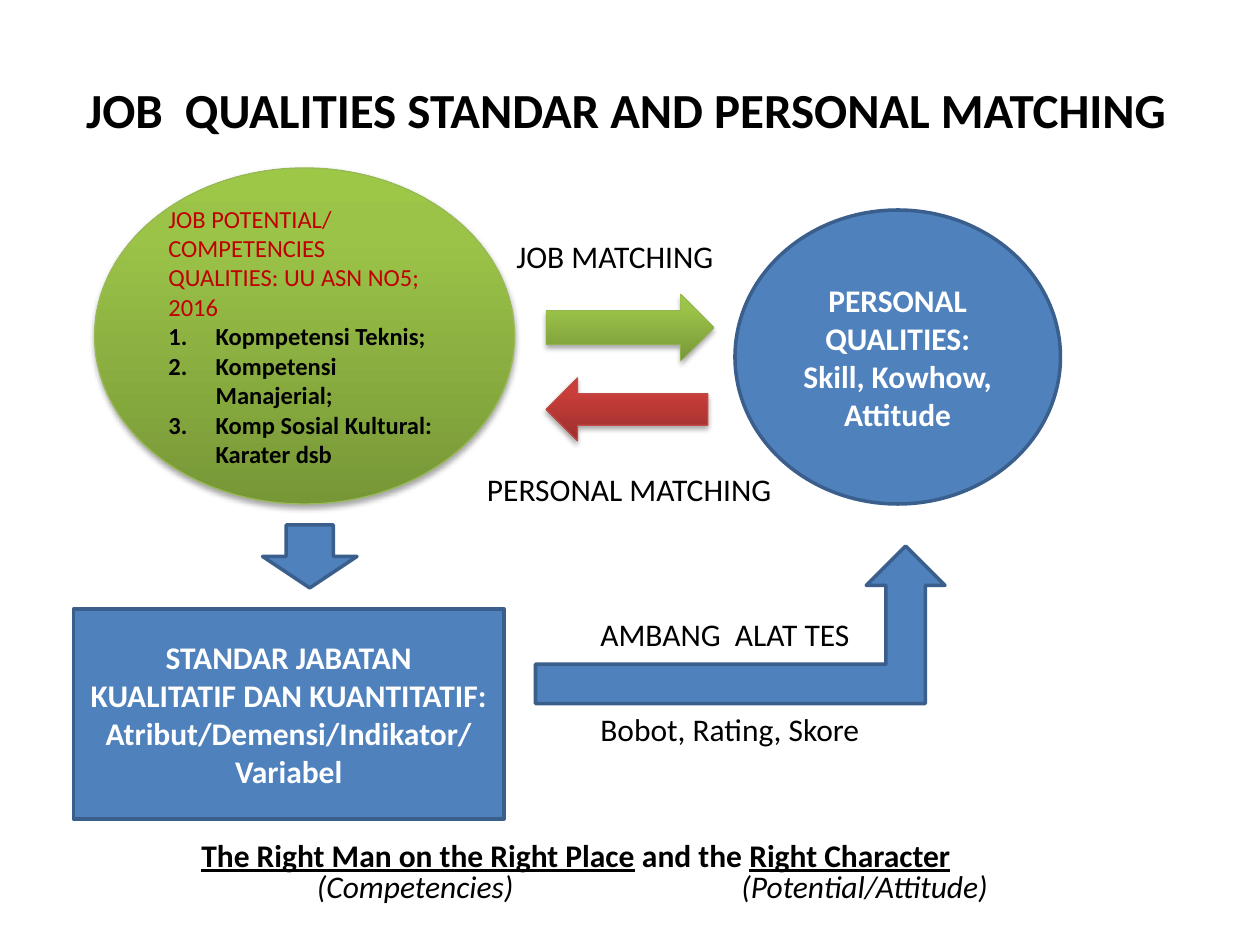
from copy import deepcopy
from lxml import etree
from pptx import Presentation
from pptx.dml.color import RGBColor
from pptx.enum.shapes import MSO_SHAPE
from pptx.enum.text import MSO_ANCHOR, PP_ALIGN
from pptx.oxml import parse_xml
from pptx.oxml.ns import nsdecls, qn
from pptx.util import Inches, Pt

OVAL, RECT = MSO_SHAPE.OVAL, MSO_SHAPE.RECTANGLE
RIGHT, LEFT = MSO_SHAPE.RIGHT_ARROW, MSO_SHAPE.LEFT_ARROW
DOWN, BENT = MSO_SHAPE.DOWN_ARROW, MSO_SHAPE.BENT_UP_ARROW
MIDDLE, TOP = MSO_ANCHOR.MIDDLE, MSO_ANCHOR.TOP
CENTER, START = PP_ALIGN.CENTER, PP_ALIGN.LEFT
GREEN = ("779737", "9BC348", "9DC746")
RED = ("9C2F2D", "CB3E3A", "CE3B37")
BLUE, NAVY, WHITE, BLACK = "4F81BD", "3A5F8C", "FFFFFF", "000000"
SHADOW = (f'<a:outerShdw {nsdecls("a")} blurRad="40000" dist="23000" dir="5400000" rotWithShape="0">'
          '<a:srgbClr val="000000"><a:alpha val="35000"/></a:srgbClr></a:outerShdw>')

prs = Presentation()
prs.slide_width, prs.slide_height = Inches(10), Inches(7.5)
CELL = prs.slide_width / 120
slide = prs.slides.add_slide(prs.slide_layouts[5])


def rgb(value):
    return RGBColor.from_string(value)


def add_text(p, text, size=18, color=BLACK, bold=False, italic=False, underline=False):
    r = p.add_run()
    r.text = text
    f = r.font
    f.name, f.size, f.bold, f.italic, f.underline = "Calibri", Pt(size), bold, italic, underline
    f.color.rgb = rgb(color)


title = slide.shapes.title
title.left, title.top, title.width, title.height = [int(v * CELL) for v in (7, 7, 106, 6.8)]
tf = title.text_frame
tf.word_wrap, tf.vertical_anchor = True, TOP
tf.paragraphs[0].alignment = START
add_text(tf.paragraphs[0], "JOB  QUALITIES STANDAR AND PERSONAL MATCHING", 28, bold=True)

frames = {}
for key, kind, box, fill, line, width in [
    ("job", OVAL, (9, 16, 40, 32), GREEN, "98B955", 0.75),
    ("person", OVAL, (70, 20, 31, 28), BLUE, NAVY, 2),
    ("job matching", RIGHT, (52, 28, 16, 6.4), GREEN, "98B955", 0.25),
    ("personal matching", LEFT, (52, 36, 15.4, 6), RED, "BF4C48", 0.75),
    ("standard", RECT, (7, 58, 41, 20), BLUE, NAVY, 2),
    ("to standard", DOWN, (25, 50, 9, 6), BLUE, NAVY, 2),
    ("to person", BENT, (51, 52, 39, 15), BLUE, NAVY, 2),
]:
    s = slide.shapes.add_shape(kind, *[int(v * CELL) for v in box])
    s.shadow.inherit = False
    s.line.color.rgb = rgb(line)
    s.line.width = Pt(width)
    if fill == BLUE:
        s.fill.solid()
        s.fill.fore_color.rgb = rgb(fill)
    else:
        s.fill.gradient()
        s.fill.gradient_angle = 90
        stops = s._element.spPr.find(".//" + qn("a:gsLst"))
        stops.append(deepcopy(stops[-1]))
        for stop, color, position in zip(s.fill.gradient_stops, fill, (0, 0.8, 1)):
            stop.color.rgb = rgb(color)
            stop.position = position
        s._element.spPr.find(qn("a:effectLst")).append(parse_xml(SHADOW))
    tf = s.text_frame
    tf.word_wrap, tf.vertical_anchor = True, MIDDLE
    frames[key] = tf

tf = frames["job"]
tf.paragraphs[0].alignment = START
add_text(tf.paragraphs[0], "JOB POTENTIAL/ COMPETENCIES QUALITIES: UU ASN NO5; 2016", 14, "C00000")
for item in ("Kopmpetensi Teknis;", "Kompetensi Manajerial;", "Komp Sosial Kultural: Karater dsb"):
    p = tf.add_paragraph()
    p.alignment = START
    pPr = p._p.get_or_add_pPr()
    pPr.set("marL", "342900")
    pPr.set("indent", "-342900")
    etree.SubElement(pPr, qn("a:buAutoNum")).set("type", "arabicPeriod")
    add_text(p, item, 14, bold=True)

p = frames["person"].paragraphs[0]
p.alignment = CENTER
add_text(p, "PERSONAL QUALITIES:", color=WHITE, bold=True)
p.add_line_break()
add_text(p, "Skill, Kowhow, Attitude", color=WHITE, bold=True)

tf = frames["standard"]
for i, text in enumerate(("STANDAR JABATAN", "KUALITATIF DAN KUANTITATIF:",
                          "Atribut/Demensi/Indikator/ Variabel")):
    p = tf.add_paragraph() if i else tf.paragraphs[0]
    p.alignment = CENTER
    add_text(p, text, color=WHITE, bold=True)

for box, wrap, runs in [
    ((48, 22, 21.4), False, [("JOB MATCHING", {})]),
    ((45.2, 44.2, 29.8), False, [("PERSONAL MATCHING", {})]),
    ((56, 58, 28), True, [("AMBANG  ALAT TES", {})]),
    ((56, 67, 27.4), False, [("Bobot, Rating, Skore", {})]),
    ((18, 79, 74.4), False, [("The Right Man on the Right Place", {"bold": True, "underline": True}),
                             (" and the ", {"bold": True}),
                             ("Right Character", {"bold": True, "underline": True})]),
    ((29, 82, 67.4), True, [("(Competencies)\t(Potential/Attitude)", {"italic": True})]),
]:
    tb = slide.shapes.add_textbox(*[int(v * CELL) for v in (*box, 4.8)])
    tf = tb.text_frame
    tf.word_wrap = wrap
    p = tf.paragraphs[0]
    for text, style in runs:
        add_text(p, text, **style)

tabs = etree.SubElement(p._p.get_or_add_pPr(), qn("a:tabLst"))
tab = etree.SubElement(tabs, qn("a:tab"))
tab.set("pos", str(Inches(3.37)))
tab.set("algn", "l")

prs.save("out.pptx")
